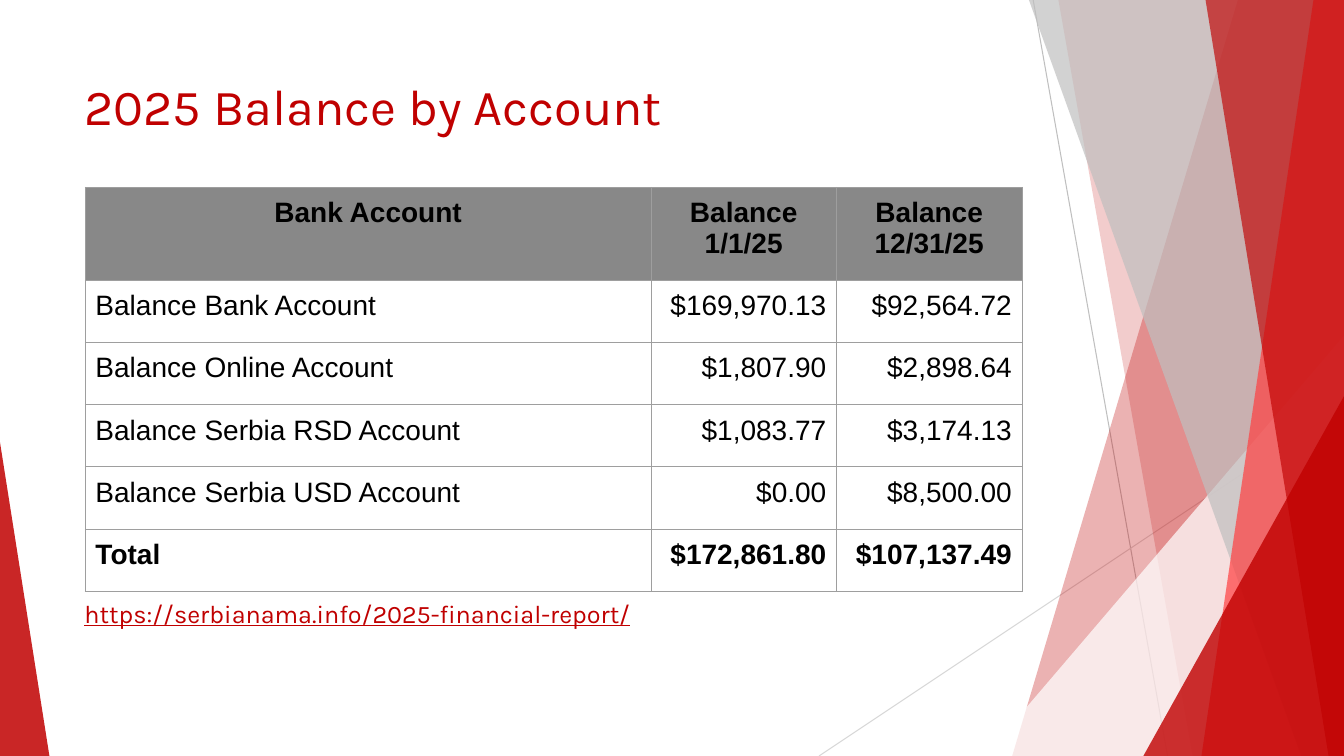
from lxml.etree import SubElement
from pptx import Presentation
from pptx.dml.color import RGBColor
from pptx.enum.shapes import MSO_CONNECTOR, MSO_SHAPE
from pptx.enum.text import MSO_ANCHOR, MSO_AUTO_SIZE, PP_ALIGN
from pptx.oxml.ns import qn
from pptx.util import Pt

RED = RGBColor(0xC0, 0x00, 0x00)
CORAL = RGBColor(0xFF, 0x3F, 0x40)
SILVER = RGBColor(0xBF, 0xBF, 0xBF)
PALE = RGBColor(0xD8, 0xD8, 0xD8)
GRAY = RGBColor(0x88, 0x88, 0x88)
EDGE = RGBColor(0x9E, 0x9E, 0x9E)
WHITE = RGBColor(0xFF, 0xFF, 0xFF)
BLACK = RGBColor(0x00, 0x00, 0x00)

# Content
TITLE = "2025 Balance by Account"
LINK = "https://serbianama.info/2025-financial-report/"
ROWS = [
    ("Bank Account", "Balance 1/1/25", "Balance 12/31/25"),
    ("Balance Bank Account", "$169,970.13", "$92,564.72"),
    ("Balance Online Account", "$1,807.90", "$2,898.64"),
    ("Balance Serbia RSD Account", "$1,083.77", "$3,174.13"),
    ("Balance Serbia USD Account", "$0.00", "$8,500.00"),
    ("Total", "$172,861.80", "$107,137.49"),
]

# Layout, in points
WIDE, HIGH = 960, 540
LEFT, SPAN = 53.3, 676.8
TABLE = (61, 133.7)
COLS = (404, 132.5, 132.5)
HEAD, BODY = 66.4, 44.5

# Rays: from x, y to x, y, colour
RAYS = [(738, 0, 834, HIGH, SILVER), (WIDE, 290, 585, HIGH, PALE)]
# Panels reach the right edge: top x, bottom x, colour, opacity
# Wedges stand on the bottom edge: left, width, height, apex, colour, opacity
DECOR = [
    (884.2, 723, RED, 30),
    (756, 851.8, RED, 20),
    (703.5, 256.5, 300.2, 1, WHITE, 72),
    (735, 929.5, SILVER, 70),
    (938.2, 858.2, CORAL, 70),
    (861.1, 949, RED, 65),
    (816.7, 143.3, 257, 1, RED, 80),
    (0, 35.3, 224, 0, RED, 85),
]


def style(para, **look):
    for key, value in look.items():
        if key == "color":
            para.font.color.rgb = value
        else:
            setattr(para.font, key, value)


def paint(shape, color, alpha):
    shape.shadow.inherit = False
    shape.fill.solid()
    shape.fill.fore_color.rgb = color
    shape.line.fill.background()
    tint = next(shape._element.spPr.iter(qn("a:srgbClr")))
    SubElement(tint, qn("a:alpha"), val=str(alpha * 1000))


def border(cell):
    props = cell._tc.get_or_add_tcPr()
    for side in ("a:lnL", "a:lnR", "a:lnT", "a:lnB"):
        line = SubElement(props, qn(side), w=str(Pt(0.75)))
        fill = SubElement(line, qn("a:solidFill"))
        SubElement(fill, qn("a:srgbClr"), val=str(EDGE))


def draw_decor(shapes):
    for x1, y1, x2, y2, color in RAYS:
        ray = shapes.add_connector(
            MSO_CONNECTOR.STRAIGHT, Pt(x1), Pt(y1), Pt(x2), Pt(y2))
        ray.line.color.rgb = color
        ray.line.width = Pt(0.75)
        SubElement(ray._element.spPr, qn("a:effectLst"))
    for *place, color, alpha in DECOR:
        if len(place) == 2:
            top, foot = place
            path = shapes.build_freeform(Pt(top), 0)
            path.add_line_segments(
                [(Pt(WIDE), 0), (Pt(WIDE), Pt(HIGH)), (Pt(foot), Pt(HIGH))])
            shape = path.convert_to_shape()
        else:
            left, width, height, apex = place
            shape = shapes.add_shape(
                MSO_SHAPE.ISOSCELES_TRIANGLE,
                Pt(left), Pt(HIGH - height), Pt(width), Pt(height))
            shape.adjustments[0] = apex
        paint(shape, color, alpha)


def draw_text(shapes):
    title = shapes.title
    box = {"left": LEFT, "top": 48.2, "width": SPAN, "height": 54}
    for key, value in box.items():
        setattr(title, key, Pt(value))
    note = shapes.add_textbox(Pt(LEFT), Pt(424), Pt(SPAN), Pt(85))
    parts = [(title, TITLE, 36, None, MSO_ANCHOR.MIDDLE),
             (note, LINK, 18, True, MSO_ANCHOR.TOP)]
    for shape, text, size, under, anchor in parts:
        frame = shape.text_frame
        frame.text = text
        frame.word_wrap = True
        frame.auto_size = MSO_AUTO_SIZE.NONE
        frame.vertical_anchor = anchor
        para = frame.paragraphs[0]
        para.alignment = PP_ALIGN.LEFT
        style(para, name="Karla", size=Pt(size), color=RED, underline=under)


def draw_table(shapes):
    highs = [HEAD] + [BODY] * (len(ROWS) - 1)
    frame = shapes.add_table(
        len(ROWS), len(COLS), Pt(TABLE[0]), Pt(TABLE[1]),
        Pt(sum(COLS)), Pt(sum(highs)))
    table = frame.table
    table.first_row = table.horz_banding = False
    for col, width in zip(table.columns, COLS):
        col.width = Pt(width)
    for r, (row, height) in enumerate(zip(ROWS, highs)):
        table.rows[r].height = Pt(height)
        for c, text in enumerate(row):
            cell = table.cell(r, c)
            cell.text = text
            for side in ("left", "right", "top", "bottom"):
                setattr(cell, "margin_" + side, Pt(7.2))
            border(cell)
            if r == 0:
                cell.fill.solid()
                cell.fill.fore_color.rgb = GRAY
                align = PP_ALIGN.CENTER
            else:
                cell.fill.background()
                align = PP_ALIGN.RIGHT if c else PP_ALIGN.LEFT
            para = cell.text_frame.paragraphs[0]
            para.alignment = align
            style(para, name="Arial", size=Pt(20), color=BLACK,
                  bold=r in (0, len(ROWS) - 1))


def main():
    deck = Presentation()
    deck.slide_width, deck.slide_height = Pt(WIDE), Pt(HIGH)
    slide = deck.slides.add_slide(deck.slide_layouts[5])
    draw_decor(slide.shapes)
    draw_text(slide.shapes)
    draw_table(slide.shapes)
    deck.save("out.pptx")


if __name__ == "__main__":
    main()
